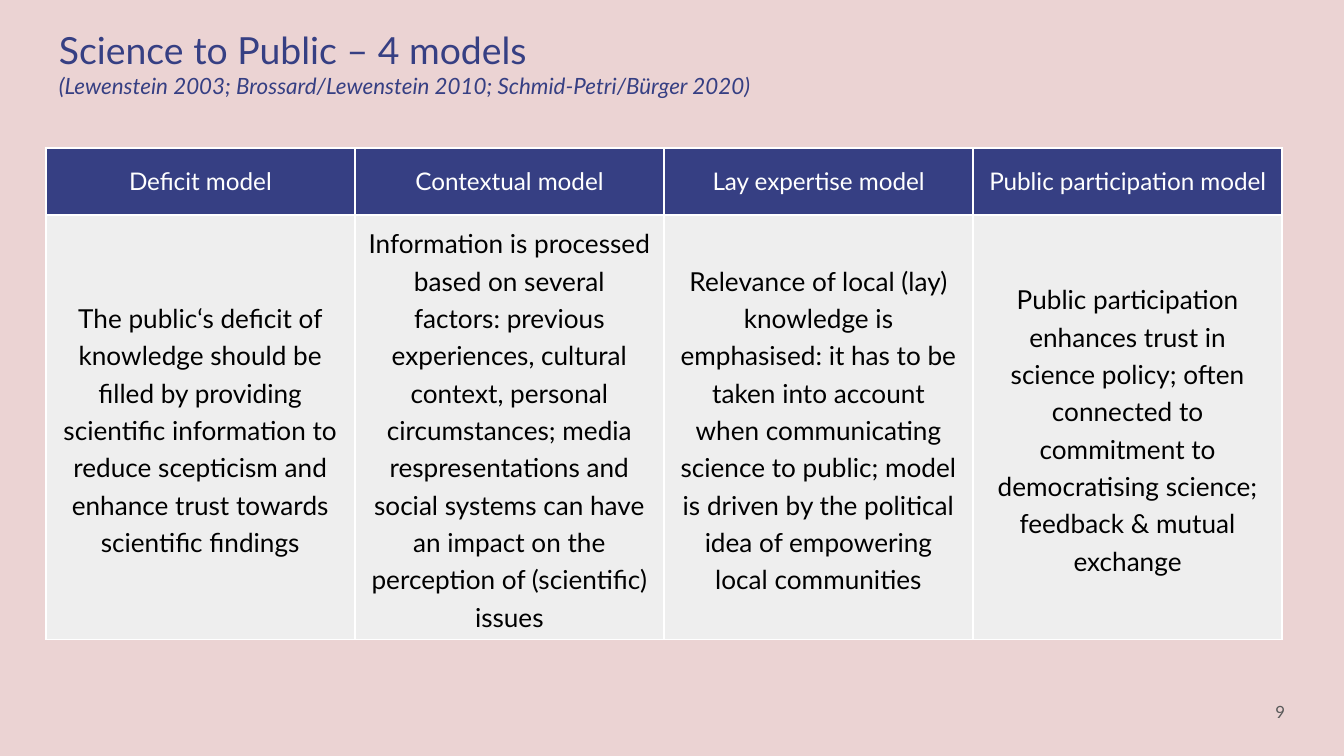
"""Build the slide on four models of science communication to the public."""
import dataclasses

import lxml.etree
import pptx
import pptx.dml.color
import pptx.enum.text
import pptx.oxml.ns
import pptx.util

Inches = pptx.util.Inches
Pt = pptx.util.Pt
ALIGN = pptx.enum.text.PP_ALIGN
ANCHOR = pptx.enum.text.MSO_ANCHOR


@dataclasses.dataclass(frozen=True)
class Theme:
    font: str = "Lato"
    background: str = "EBD3D3"
    accent: str = "363F83"
    panel: str = "EEEEEE"
    body: str = "000000"
    light: str = "FFFFFF"
    muted: str = "595959"
    title_size: int = 20
    source_size: int = 12
    header_size: int = 13
    body_size: int = 14
    number_size: int = 9
    border_width: int = 1


class ModelSlide:
    def __init__(self, presentation, theme):
        self.theme = theme
        self.slide = presentation.slides.add_slide(presentation.slide_layouts[6])
        self.fill(self.slide.background.fill, theme.background)

    def fill(self, target, color):
        target.solid()
        target.fore_color.rgb = pptx.dml.color.RGBColor.from_string(color)

    def apply(self, target, formats):
        for name, value in formats.items():
            setattr(target, name, value)

    def run(self, paragraph, wording, size, color, italic=False):
        run = paragraph.add_run()
        run.text = wording
        self.apply(run.font, {"name": self.theme.font, "size": Pt(size), "italic": italic})
        run.font.color.rgb = pptx.dml.color.RGBColor.from_string(color)

    def text(self, left, top, width, height, runs, align=ALIGN.LEFT, anchor=ANCHOR.TOP):
        box = self.slide.shapes.add_textbox(
            Inches(left), Inches(top), Inches(width), Inches(height))
        sides = ("left", "top", "right", "bottom")
        self.apply(box.text_frame, {
            "word_wrap": True,
            "vertical_anchor": anchor,
            **{f"margin_{side}": Inches(0.1) for side in sides},
        })
        paragraph = box.text_frame.paragraphs[0]
        paragraph.alignment = align
        for index, run in enumerate(runs):
            if index:
                paragraph.add_line_break()
            self.run(paragraph, *run)

    def borders(self, cell):
        properties = cell._tc.get_or_add_tcPr()
        for index, edge in enumerate(("a:lnL", "a:lnR", "a:lnT", "a:lnB")):
            line = lxml.etree.Element(
                pptx.oxml.ns.qn(edge), w=str(Pt(self.theme.border_width)))
            paint = lxml.etree.SubElement(line, pptx.oxml.ns.qn("a:solidFill"))
            lxml.etree.SubElement(
                paint, pptx.oxml.ns.qn("a:srgbClr"), val=self.theme.light)
            properties.insert(index, line)

    def cell(self, cell, wording, size, color, fill, spacing):
        self.fill(cell.fill, fill)
        self.borders(cell)
        cell.vertical_anchor = ANCHOR.MIDDLE
        paragraph = cell.text_frame.paragraphs[0]
        self.apply(paragraph, {"alignment": ALIGN.CENTER, **spacing})
        self.run(paragraph, wording, size, color)

    def table(self, left, top, column_width, row_heights, models):
        theme = self.theme
        table = self.slide.shapes.add_table(
            len(row_heights), len(models), Inches(left), Inches(top),
            Inches(column_width * len(models)), Inches(sum(row_heights))).table
        for row, height in zip(table.rows, row_heights):
            row.height = Inches(height)
        header = (theme.header_size, theme.light, theme.accent, {})
        description = (theme.body_size, theme.body, theme.panel,
                       {"line_spacing": Pt(20), "space_after": Pt(3)})
        for column, model in enumerate(models):
            table.columns[column].width = Inches(column_width)
            for row, (wording, style) in enumerate(zip(model, (header, description))):
                self.cell(table.cell(row, column), wording, *style)


MODELS = (
    ("Deficit model",
     "The public‘s deficit of knowledge should be filled by providing scientific "
     "information to reduce scepticism and enhance trust towards scientific findings"),
    ("Contextual model",
     "Information is processed based on several factors: previous experiences, "
     "cultural context, personal circumstances; media respresentations and social "
     "systems can have an impact on the perception of (scientific) issues"),
    ("Lay expertise model",
     "Relevance of local (lay) knowledge is emphasised: it has to be taken into "
     "account when communicating science to public; model is driven by the political "
     "idea of empowering local communities"),
    ("Public participation model",
     "Public participation enhances trust in science policy; often connected to "
     "commitment to democratising science; feedback & mutual exchange"),
)


def main():
    theme = Theme()
    presentation = pptx.Presentation()
    presentation.slide_width = Inches(10)
    presentation.slide_height = Inches(10 * 9 / 16)
    page = ModelSlide(presentation, theme)
    page.text(0.34, 0.1, 7.44, 0.63, (
        ("Science to Public – 4 models", theme.title_size, theme.accent),
        ("(Lewenstein 2003; Brossard/Lewenstein 2010; Schmid-Petri/Bürger 2020)",
         theme.source_size, theme.accent, True),
    ))
    page.table(0.34, 1.1, 2.3, (0.5, 3.16), MODELS)
    page.text(9.06, 5.08, 0.6, 0.43, (("9", theme.number_size, theme.muted),),
              ALIGN.RIGHT, ANCHOR.MIDDLE)
    presentation.save("out.pptx")


if __name__ == "__main__":
    main()
